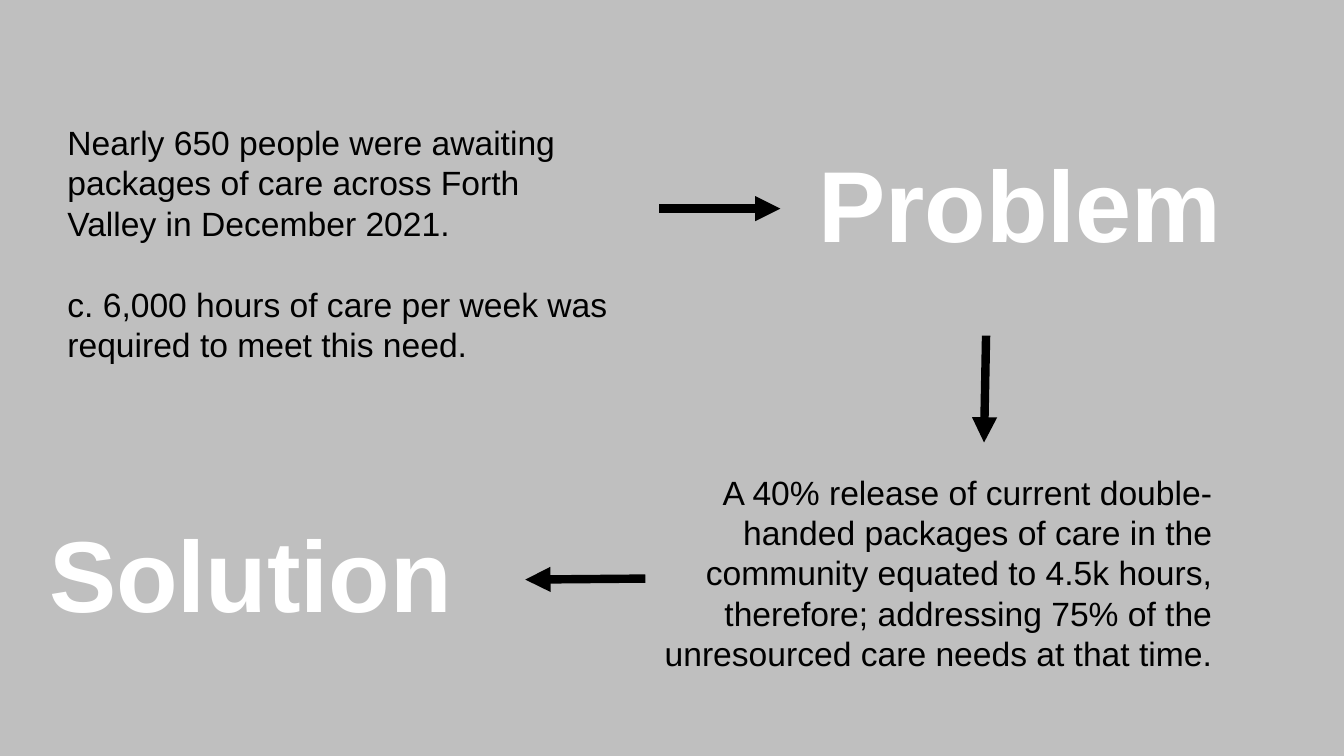
import pptx
import pptx.util
import pptx.dml.color
import pptx.enum.shapes
import pptx.enum.text
import pptx.oxml

# Content: lengths in px, 100 px to the inch
EMU_PER_PX = 9144
SLIDE_W, SLIDE_H = 1333, 750
FONT = "Arial"
BACKGROUND, BLACK, WHITE = "BFBFBF", "000000", "FFFFFF"
ARROW_PT = 6
PARAGRAPH_GAP_PT = 29

LEFT = pptx.enum.text.PP_ALIGN.LEFT
RIGHT = pptx.enum.text.PP_ALIGN.RIGHT

# (box, alignment, [(paragraph, space before)])
STATEMENTS = [
    ((57, 116, 615, 252), LEFT, [
        ("Nearly 650 people were awaiting packages of care across Forth", 0),
        ("Valley in December 2021.", 0),
        ("c. 6,000 hours of care per week was required to meet this need.",
         PARAGRAPH_GAP_PT),
    ]),
    ((631, 463, 581, 252), RIGHT, [
        ("A 40% release of current double-handed packages of care in the "
         "community equated to 4.5k hours, therefore; addressing 75% of the "
         "unresourced care needs at that time.", 0),
    ]),
]
HEADINGS = [
    ((802, 136, 467, 131), "Problem"),
    ((39, 503, 467, 131), "Solution"),
]
# Start and end points, head at the end
ARROWS = [
    (654, 207, 774, 207),
    (640, 574, 521, 575),
    (978, 333, 976, 439),
]


def px(*lengths):
    return [pptx.util.Emu(n * EMU_PER_PX) for n in lengths]


def rgb(hex_color):
    return pptx.dml.color.RGBColor.from_string(hex_color)


def add_text(s, box, paragraphs, size, color, bold=False, align=LEFT):
    tf = s.shapes.add_textbox(*px(*box)).text_frame
    tf.word_wrap = True
    for i, (text, space_before) in enumerate(paragraphs):
        p = tf.paragraphs[0] if i == 0 else tf.add_paragraph()
        p.alignment = align
        p.space_before = pptx.util.Pt(space_before)
        r = p.add_run()
        r.text = text
        r.font.name = FONT
        r.font.size = pptx.util.Pt(size)
        r.font.bold = bold
        r.font.color.rgb = rgb(color)


def add_arrow(s, points):
    line = s.shapes.add_connector(
        pptx.enum.shapes.MSO_CONNECTOR.STRAIGHT, *px(*points))
    line.line.color.rgb = rgb(BLACK)
    line.line.width = pptx.util.Pt(ARROW_PT)
    ns = pptx.oxml.ns.qn
    head = line.line._get_or_add_ln().makeelement(
        ns("a:tailEnd"), {"type": "triangle"})
    line.line._get_or_add_ln().append(head)
    sp_pr = line._element.spPr
    sp_pr.append(sp_pr.makeelement(ns("a:effectLst"), {}))


def main():
    prs = pptx.Presentation()
    prs.slide_width, prs.slide_height = px(SLIDE_W, SLIDE_H)
    s = prs.slides.add_slide(prs.slide_layouts.get_by_name("Blank"))
    s.background.fill.solid()
    s.background.fill.fore_color.rgb = rgb(BACKGROUND)

    # Statements
    for box, align, paragraphs in STATEMENTS:
        add_text(s, box, paragraphs, 24, BLACK, align=align)

    # Arrows from statement to heading
    for points in ARROWS:
        add_arrow(s, points)

    # Headings
    for box, text in HEADINGS:
        add_text(s, box, [(text, 0)], 72, WHITE, bold=True)

    prs.save("out.pptx")


if __name__ == "__main__":
    main()
